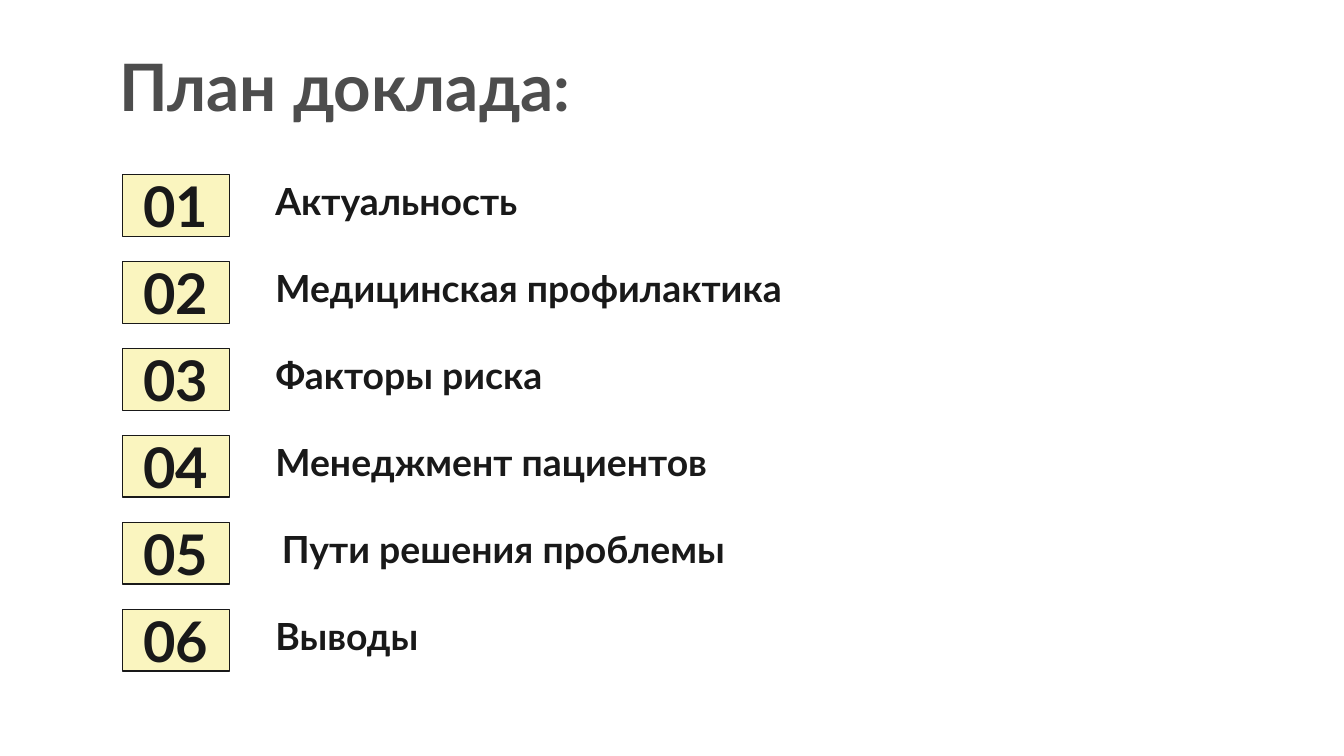
from dataclasses import dataclass

from pptx import Presentation
from pptx import util as u
from pptx.dml.color import RGBColor
from pptx.enum import shapes, text

TITLE_GRAY = RGBColor(0x4D, 0x4D, 0x4D)
INK = RGBColor(0x19, 0x19, 0x19)
PALE_YELLOW = RGBColor(0xFA, 0xF5, 0xBF)
FONT = "Lato"

SLIDE_WIDTH = u.Inches(10)
SLIDE_HEIGHT = SLIDE_WIDTH * 9 // 16
FIRST_TOP = 1.3
ROW_STEP = 1.94 / 3
ROW_HEIGHT = 0.46
NUMBER_LEFT = 0.91
NUMBER_WIDTH = 0.8
TOPIC_WIDTH = 4.76


@dataclass(frozen=True)
class Topic:
    name: str
    left: float = 1.95
    margin: float = 0
    indent: float = 0


TOPICS = [
    Topic("Актуальность"),
    Topic("Медицинская профилактика"),
    Topic("Факторы риска"),
    Topic("Менеджмент пациентов"),
    Topic("Пути решения проблемы", left=1.83, margin=0.5, indent=-0.33),
    Topic("Выводы"),
]


def write(shape, words: str, size: float, color: RGBColor, anchor, align) -> None:
    frame = shape.text_frame
    frame.text = words
    frame.word_wrap = True
    frame.auto_size = text.MSO_AUTO_SIZE.NONE
    frame.vertical_anchor = anchor
    frame.margin_left = frame.margin_right = u.Inches(0.1)
    frame.margin_top = frame.margin_bottom = u.Inches(0.1)
    paragraph = frame.paragraphs[0]
    paragraph.alignment = align
    paragraph.line_spacing = 1.0
    paragraph.space_before = u.Pt(0)
    font = paragraph.runs[0].font
    font.name = FONT
    font.size = u.Pt(size)
    font.bold = True
    font.color.rgb = color


def draw_number(slide, number: int, top: float) -> None:
    badge = slide.shapes.add_shape(
        shapes.MSO_SHAPE.RECTANGLE, u.Inches(NUMBER_LEFT), u.Inches(top),
        u.Inches(NUMBER_WIDTH), u.Inches(ROW_HEIGHT))
    badge.shadow.inherit = False
    badge.fill.solid()
    badge.fill.fore_color.rgb = PALE_YELLOW
    badge.line.color.rgb = INK
    badge.line.width = u.Pt(0.75)
    write(badge, f"{number:02d}", 30, INK,
          text.MSO_ANCHOR.MIDDLE, text.PP_ALIGN.CENTER)


def draw_topic(slide, topic: Topic, top: float) -> None:
    label = slide.shapes.add_textbox(
        u.Inches(topic.left), u.Inches(top),
        u.Inches(TOPIC_WIDTH), u.Inches(ROW_HEIGHT))
    write(label, topic.name, 20, INK,
          text.MSO_ANCHOR.BOTTOM, text.PP_ALIGN.LEFT)
    if topic.margin:
        properties = label.text_frame.paragraphs[0]._p.get_or_add_pPr()
        properties.set("marL", str(u.Inches(topic.margin)))
        properties.set("indent", str(u.Inches(topic.indent)))


def main() -> None:
    deck = Presentation()
    deck.slide_width = SLIDE_WIDTH
    deck.slide_height = SLIDE_HEIGHT
    slide = deck.slides.add_slide(deck.slide_layouts[5])

    heading = slide.shapes.title
    heading.left, heading.top = u.Inches(0.79), u.Inches(0.24)
    heading.width, heading.height = u.Inches(8.43), u.Inches(0.63)
    write(heading, "План доклада:", 35, TITLE_GRAY,
          text.MSO_ANCHOR.TOP, text.PP_ALIGN.LEFT)

    for row, topic in enumerate(TOPICS):
        top = FIRST_TOP + row * ROW_STEP
        draw_number(slide, row + 1, top)
        draw_topic(slide, topic, top)

    deck.save("out.pptx")


if __name__ == "__main__":
    main()
